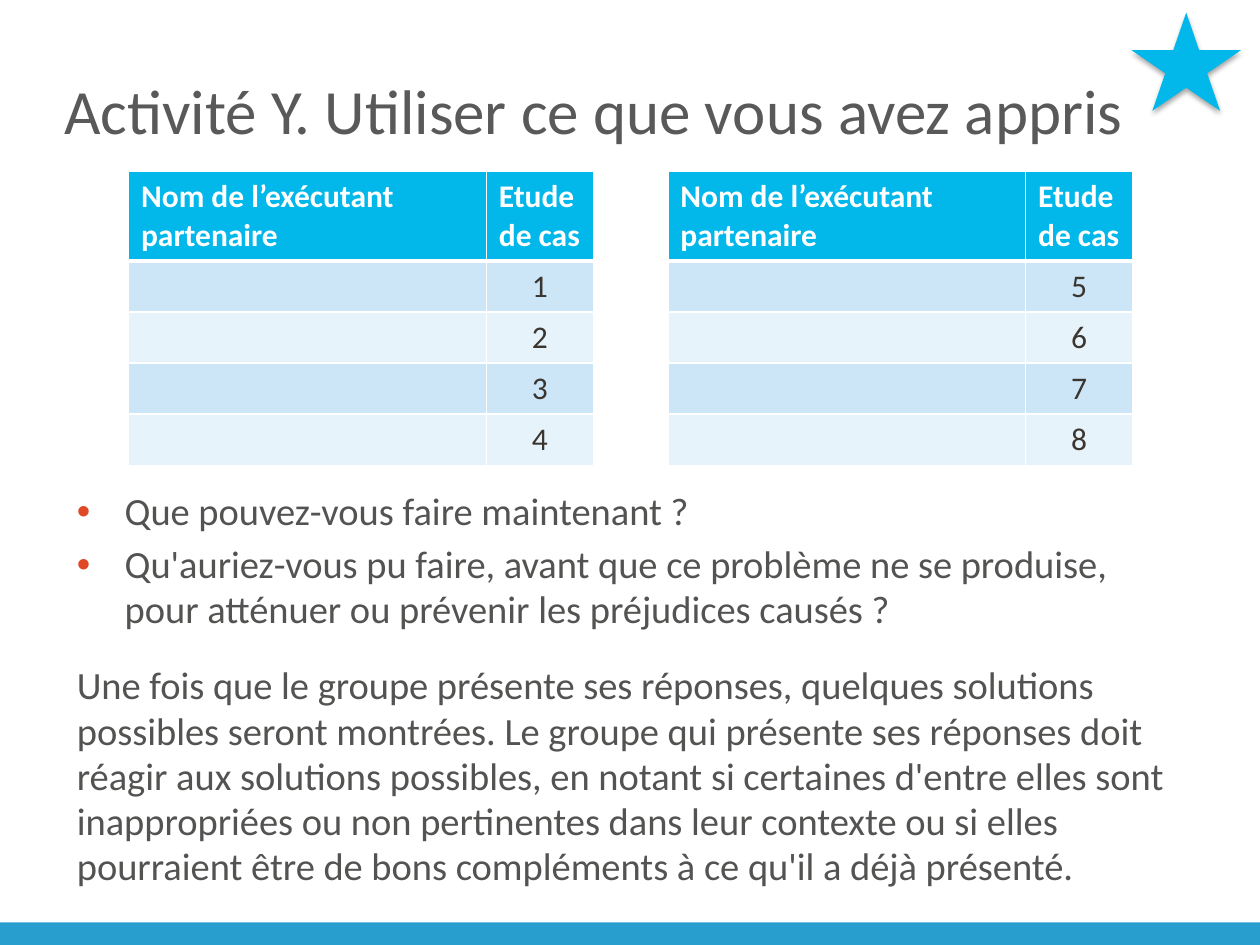
"""Build the activity slide with two case tables and the group task."""
from dataclasses import dataclass

from lxml import etree
from pptx import Presentation
from pptx.dml.color import RGBColor as Rgb
from pptx.enum import shapes, text
from pptx.oxml import ns
from pptx.util import Inches, Pt


@dataclass(frozen=True)
class Theme:
    """Colours, font and type sizes."""
    font: str = "Calibri"
    title: str = "595959"
    body: str = "535352"
    cell: str = "3B352F"
    white: str = "FFFFFF"
    star: str = "02B7EA"
    bar: str = "279ECE"
    dot: str = "E04726"
    bands: tuple = ("CCE6F7", "E7F3FB")
    big: int = 36
    mid: int = 22
    small: int = 18


@dataclass(frozen=True)
class Box:
    """Place and size in inches."""
    left: float
    top: float
    width: float
    height: float

    def sides(self) -> tuple:
        """Return the four lengths for a shape call."""
        return tuple(map(Inches, (self.left, self.top, self.width, self.height)))


@dataclass(frozen=True)
class Grid:
    """A case table: its left edge and first case number."""
    left: float
    first: int


@dataclass(frozen=True)
class Item:
    """A body paragraph."""
    words: str
    dotted: bool
    before: float


LOOK = Theme()
HEADS = ("Nom de l’exécutant partenaire", "Etude de cas")
COLS = (2.84, 0.85)
ROWS = (0.71, 0.4, 0.4, 0.4, 0.4)
GRIDS = (Grid(1.02, 1), Grid(5.3, 5))
ITEMS = (
    Item("Que pouvez-vous faire maintenant ?", True, 0),
    Item("Qu'auriez-vous pu faire, avant que ce problème ne se produise, "
         "pour atténuer ou prévenir les préjudices causés ?", True, 4.4),
    Item("Une fois que le groupe présente ses réponses, quelques solutions "
         "possibles seront montrées. Le groupe qui présente ses réponses doit "
         "réagir aux solutions possibles, en notant si certaines d'entre elles "
         "sont inappropriées ou non pertinentes dans leur contexte ou si elles "
         "pourraient être de bons compléments à ce qu'il a déjà présenté.",
         False, 18),
)


def add_tag(parent, tag: str, **attrs):
    """Append a drawing element with its attributes."""
    pairs = {key: str(val) for key, val in attrs.items()}
    return etree.SubElement(parent, ns.qn(f"a:{tag}"), pairs)


def add_run(para, words: str, size: float, hue: str, bold: bool = False) -> None:
    """Add one styled run."""
    run = para.add_run()
    run.text = words
    font = run.font
    font.name, font.size, font.bold = LOOK.font, Pt(size), bold
    font.color.rgb = Rgb.from_string(hue)


def place(holder, box: Box, anchor):
    """Move a placeholder and return its text frame."""
    holder.left, holder.top, holder.width, holder.height = box.sides()
    frame = holder.text_frame
    frame.word_wrap = True
    frame.auto_size = text.MSO_AUTO_SIZE.NONE
    frame.vertical_anchor = anchor
    return frame


def add_item(para, item: Item) -> None:
    """Fill one body paragraph, with a bullet if it is dotted."""
    props = para._p.get_or_add_pPr()
    indent = Inches(0.38) if item.dotted else 0
    props.set("marL", str(indent))
    props.set("indent", str(-indent))
    if item.dotted:
        add_tag(add_tag(props, "buClr"), "srgbClr", val=LOOK.dot)
        add_tag(props, "buFont", typeface="Arial")
        add_tag(props, "buChar", char="•")
    else:
        add_tag(props, "buNone")
    para.space_before = Pt(item.before)
    para.line_spacing = 0.98
    add_run(para, item.words, LOOK.mid, LOOK.body)


def add_form(slide, kind, box: Box, hue: str):
    """Add a plain filled shape."""
    form = slide.shapes.add_shape(kind, *box.sides())
    form.shadow.inherit = False
    form.fill.solid()
    form.fill.fore_color.rgb = Rgb.from_string(hue)
    form.line.fill.background()
    return form


def add_shade(form) -> None:
    """Give a shape a soft shadow below it."""
    effects = form._element.spPr.find(ns.qn("a:effectLst"))
    shade = add_tag(effects, "outerShdw", blurRad=Pt(3.1), dist=Pt(1.8),
                    dir=90 * 60000, rotWithShape=0)
    add_tag(add_tag(shade, "srgbClr", val="000000"), "alpha", val=35000)


def paint(cell, row: int) -> None:
    """Set the borders and fill of a cell by its row."""
    props = cell._tc.get_or_add_tcPr()
    thick = {"T": 3 if row == 1 else 1, "B": 3 if row == 0 else 1}
    for side in "LRTB":
        edge = add_tag(props, f"ln{side}", w=Pt(thick.get(side, 1)))
        add_tag(add_tag(edge, "solidFill"), "srgbClr", val=LOOK.white)
    cell.fill.solid()
    hue = LOOK.bands[(row - 1) % 2] if row else LOOK.star
    cell.fill.fore_color.rgb = Rgb.from_string(hue)


def add_grid(slide, grid: Grid) -> None:
    """Draw one table of numbered cases."""
    box = Box(grid.left, 1.36, sum(COLS), sum(ROWS))
    table = slide.shapes.add_table(len(ROWS), len(COLS), *box.sides()).table
    for col, width in zip(table.columns, COLS):
        col.width = Inches(width)
    for row, height in enumerate(ROWS):
        table.rows[row].height = Inches(height)
        for cell in table.rows[row].cells:
            paint(cell, row)
        if row:
            para = table.cell(row, 1).text_frame.paragraphs[0]
            para.alignment = text.PP_ALIGN.CENTER
            add_run(para, str(grid.first + row - 1), LOOK.small, LOOK.cell)
    for col, head in enumerate(HEADS):
        para = table.cell(0, col).text_frame.paragraphs[0]
        add_run(para, head, LOOK.small, LOOK.white, True)


def main() -> None:
    """Build and save the slide."""
    deck = Presentation()
    deck.slide_width, deck.slide_height = Inches(10), Inches(7.5)
    slide = deck.slides.add_slide(deck.slide_layouts[1])
    add_form(slide, shapes.MSO_SHAPE.RECTANGLE, Box(0, 7.32, 10.05, 0.21), LOOK.bar)

    frame = place(slide.shapes.title, Box(0.41, 0.34, 8.99, 1.06),
                  text.MSO_ANCHOR.MIDDLE)
    para = frame.paragraphs[0]
    para.alignment = text.PP_ALIGN.LEFT
    add_run(para, "Activité Y. Utiliser ce que vous avez appris",
            LOOK.big, LOOK.title)

    frame = place(slide.placeholders[1], Box(0.51, 3.83, 8.99, 3.31),
                  text.MSO_ANCHOR.TOP)
    for spot, item in enumerate(ITEMS):
        add_item(frame.add_paragraph() if spot else frame.paragraphs[0], item)

    star = Box(8.98, 0.1, 0.87, 0.78)
    add_shade(add_form(slide, shapes.MSO_SHAPE.STAR_5_POINT, star, LOOK.star))
    for grid in GRIDS:
        add_grid(slide, grid)
    deck.save("out.pptx")


if __name__ == "__main__":
    main()
